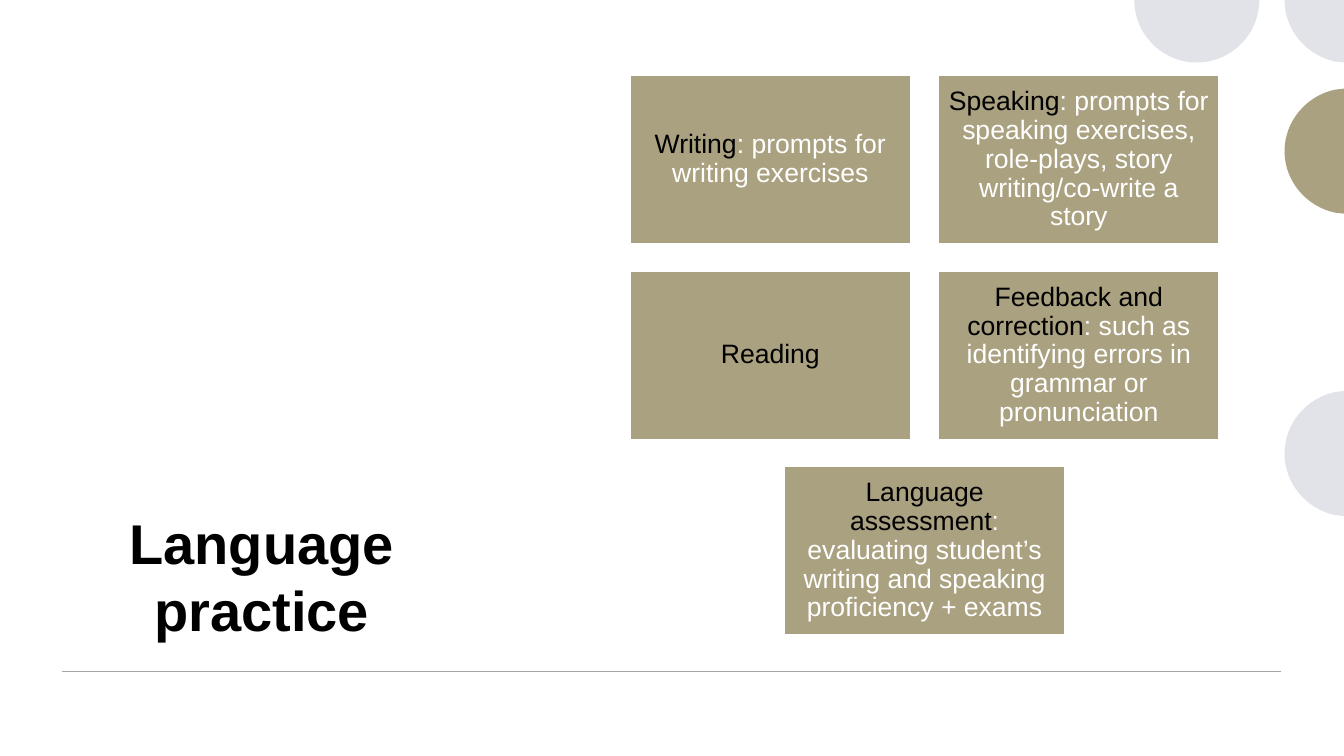
from lxml import etree
from pptx import Presentation
from pptx.dml.color import RGBColor
from pptx.enum.shapes import MSO_CONNECTOR, MSO_SHAPE
from pptx.enum.text import MSO_ANCHOR, PP_ALIGN
from pptx.oxml.ns import qn
from pptx.util import Inches, Pt

RECTANGLE = MSO_SHAPE.RECTANGLE
STRAIGHT = MSO_CONNECTOR.STRAIGHT
MIDDLE, BOTTOM = MSO_ANCHOR.MIDDLE, MSO_ANCHOR.BOTTOM
CENTER = PP_ALIGN.CENTER

COLORS = {"olive": "AAA180", "mist": "E2E3E8", "rule": "A6A6A6",
          "black": "000000", "white": "FFFFFF"}
FONT = "Arial"
PAGE_WIDTH, PAGE_HEIGHT = 13.33, 7.5
CARD_WIDTH, CARD_HEIGHT = 2.78, 1.67
CARD_MARGIN = 0.09
COLUMN_STEP, ROW_STEP = 3.06, 1.94
GRID_LEFT, GRID_TOP = 6.25, 0.75

HALF_CORNERS = [(11.25, 0), (12.49, 0)]
HALF_CURVE = [(12.49, 0.34), (12.21, 0.62), (11.87, 0.62),
              (11.53, 0.62), (11.25, 0.34), (11.25, 0)]
LOWER_CURVE = [(12.96, 0.55), (12.74, 0.3), (12.74, 0)]
UPPER_CURVE = [(12.74, -0.3), (12.96, -0.55), (13.24, -0.61)]
EDGE_CORNERS = [(13.33, -0.62), (13.33, 0.62), (13.24, 0.61)]
QUARTER_CORNERS = [(12.74, 0), (13.33, 0), (13.33, 0.62), (13.24, 0.61)]

DISCS = [
    (HALF_CORNERS, HALF_CURVE, 0, "mist"),
    (EDGE_CORNERS, LOWER_CURVE + UPPER_CURVE, 4.5, "mist"),
    (EDGE_CORNERS, LOWER_CURVE + UPPER_CURVE, 1.5, "olive"),
    (QUARTER_CORNERS, LOWER_CURVE, 0, "mist"),
]
CARDS = [
    (0, 0, "Writing", ": prompts for writing exercises"),
    (1, 0, "Speaking", ": prompts for speaking exercises, role-plays, "
                       "story writing/co-write a story"),
    (0, 1, "Reading", ""),
    (1, 1, "Feedback and correction", ": such as identifying errors in "
                                      "grammar or pronunciation"),
    (0.5, 2, "Language assessment", ": evaluating student’s writing and "
                                    "speaking proficiency + exams"),
]


def color(name):
    return RGBColor.from_string(COLORS[name])


def add_span(para, text, size, color_name, bold=False):
    span = para.add_run()
    span.text = text
    span.font.name = FONT
    span.font.size = Pt(size)
    span.font.bold = bold
    span.font.color.rgb = color(color_name)


def prepare_text(shape, anchor, line_spacing):
    frame = shape.text_frame
    frame.word_wrap = True
    frame.vertical_anchor = anchor
    para = frame.paragraphs[0]
    para.alignment = CENTER
    para.line_spacing = line_spacing
    return para


def bend_last_segments(shape, count):
    segments = list(shape._element.iter(qn("a:lnTo")))[-count:]
    for start in range(0, count, 3):
        curve = etree.Element(qn("a:cubicBezTo"))
        segments[start].addprevious(curve)
        for segment in segments[start:start + 3]:
            curve.append(segment[0])
            segment.getparent().remove(segment)


def add_disc(page, corners, curve, center_y, color_name):
    points = [(Inches(x), Inches(center_y + y)) for x, y in corners + curve]
    builder = page.shapes.build_freeform(*points[0])
    builder.add_line_segments(points[1:], close=True)
    disc = builder.convert_to_shape()
    bend_last_segments(disc, len(curve))
    disc.shadow.inherit = False
    disc.fill.solid()
    disc.fill.fore_color.rgb = color(color_name)
    disc.line.fill.background()


def add_title(page, text):
    box = page.shapes.add_textbox(Inches(0.62), Inches(2.72),
                                  Inches(3.95), Inches(3.71))
    para = prepare_text(box, BOTTOM, 1.0)
    add_span(para, text, 40, "black", bold=True)


def add_rule(page):
    rule = page.shapes.add_connector(STRAIGHT, Inches(0.62), Inches(6.66),
                                     Inches(12.71), Inches(6.66))
    rule.line.color.rgb = color("rule")
    rule.line.width = Pt(1)
    etree.SubElement(rule._element.spPr, qn("a:effectLst"))


def add_card(page, column, row, heading, detail):
    card = page.shapes.add_shape(
        RECTANGLE, Inches(GRID_LEFT + column * COLUMN_STEP),
        Inches(GRID_TOP + row * ROW_STEP),
        Inches(CARD_WIDTH), Inches(CARD_HEIGHT))
    card.shadow.inherit = False
    card.fill.solid()
    card.fill.fore_color.rgb = color("olive")
    card.line.color.rgb = color("white")
    card.line.width = Pt(1)
    para = prepare_text(card, MIDDLE, 0.9)
    frame = card.text_frame
    frame.margin_left = frame.margin_right = Inches(CARD_MARGIN)
    frame.margin_top = frame.margin_bottom = Inches(CARD_MARGIN)
    add_span(para, heading, 19, "black")
    if detail:
        add_span(para, detail, 19, "white")


def main():
    deck = Presentation()
    deck.slide_width = Inches(PAGE_WIDTH)
    deck.slide_height = Inches(PAGE_HEIGHT)
    page = deck.slides.add_slide(deck.slide_layouts[6])
    add_title(page, "Language practice")
    for disc in DISCS:
        add_disc(page, *disc)
    add_rule(page)
    for card in CARDS:
        add_card(page, *card)
    deck.save("out.pptx")


if __name__ == "__main__":
    main()
